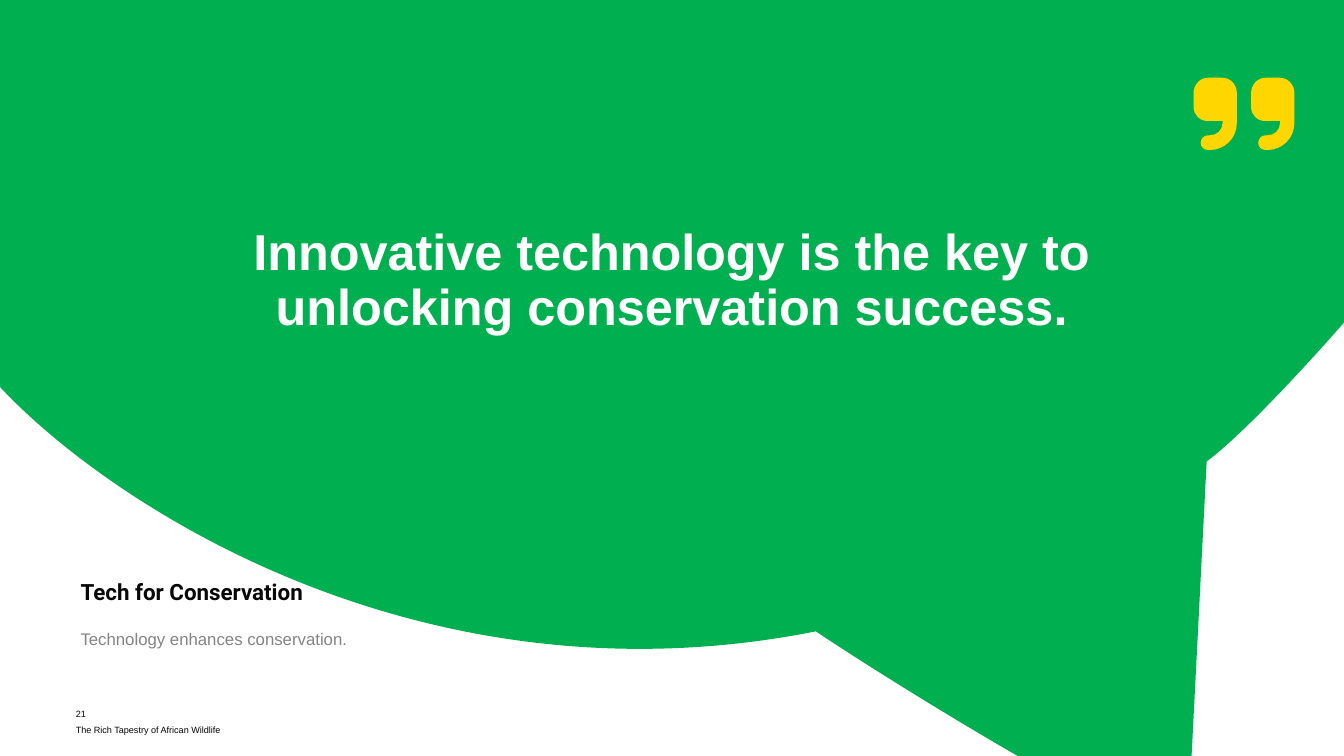
import lxml.etree
import pptx
import pptx.util
import pptx.dml.color
import pptx.enum.text
import pptx.oxml.ns

Cm = pptx.util.Cm
Pt = pptx.util.Pt
Align = pptx.enum.text.PP_ALIGN
Anchor = pptx.enum.text.MSO_ANCHOR
tag = pptx.oxml.ns.qn

COLORS = {
    "bubble": "00B050",
    "mark": "FFD600",
    "quote": "FFFFFF",
    "ink": "080808",
    "note": "848484",
}

BUBBLE = [
    (0, 9.75), (0, 0), (33.87, 0), (33.87, 8.13),
    (33.87, 8.13, 31.6, 10.74, 30.41, 11.63),
    (30.03, 19.05), (25.65, 19.05),
    (24.66, 18.49, 22.3, 17.07, 20.56, 15.91),
    (10.52, 17.91, 2.67, 12.62, 0, 9.75),
]
MARK = [
    (1.09, 1.14),
    (1.09, 1.52, 0.79, 1.82, 0.41, 1.82),
    (0.36, 1.82),
    (0.26, 1.82, 0.18, 1.74, 0.18, 1.64),
    (0.18, 1.54, 0.26, 1.45, 0.36, 1.45),
    (0.41, 1.45),
    (0.59, 1.45, 0.73, 1.32, 0.73, 1.14),
    (0.73, 1.09), (0.36, 1.09),
    (0.16, 1.09, 0, 0.94, 0, 0.74),
    (0, 0.38),
    (0, 0.18, 0.16, 0, 0.36, 0),
    (0.73, 0),
    (0.93, 0, 1.09, 0.18, 1.09, 0.38),
]
STEP = 1.45


def color(name):
    return pptx.dml.color.RGBColor.from_string(COLORS[name])


def spots(part, shift):
    return [(Cm(x + shift), Cm(y)) for x, y in zip(part[::2], part[1::2])]


def curve(shape, outline, count):
    lines = shape.element.iter(tag("a:lnTo"))
    nodes = iter(list(lines))
    for part in outline[1:] * count:
        group = [next(nodes) for _ in range(len(part) // 2)]
        if len(group) == 3:
            bend = lxml.etree.Element(tag("a:cubicBezTo"))
            group[0].addprevious(bend)
            for node in group:
                bend.append(node[0])
                node.getparent().remove(node)


def draw(slide, left, top, outline, fill, shifts=(0,)):
    pen = slide.shapes.build_freeform(*spots(outline[0], shifts[0])[0])
    for i, shift in enumerate(shifts):
        if i:
            pen.move_to(*spots(outline[0], shift)[0])
        points = [spot for part in outline[1:] for spot in spots(part, shift)]
        pen.add_line_segments(points, close=True)
    shape = pen.convert_to_shape(Cm(left), Cm(top))
    curve(shape, outline, len(shifts))
    shape.shadow.inherit = False
    shape.fill.solid()
    shape.fill.fore_color.rgb = color(fill)
    shape.line.fill.background()


def write(slide, box, text, size, ink, font="Arial", bold=False,
          align=Align.LEFT, anchor=Anchor.TOP, lines=1.0, before=0):
    frame = slide.shapes.add_textbox(*map(Cm, box)).text_frame
    frame.word_wrap = True
    frame.margin_left = frame.margin_right = 0
    frame.margin_top = frame.margin_bottom = 0
    frame.vertical_anchor = anchor
    para = frame.paragraphs[0]
    para.text = text
    para.alignment = align
    para.line_spacing = lines
    para.space_before = Pt(before)
    para.font.name = font
    para.font.size = Pt(size)
    para.font.bold = bold
    para.font.color.rgb = color(ink)


def quote(slide, left, top, width, height):
    draw(slide, left, top, BUBBLE, "bubble")
    draw(slide, left + width - 3.79, top + 1.96, MARK, "mark", (STEP, 0))
    write(slide, (left + 5.2, top + 4.14, 23.47, 5.92),
          "Innovative technology is the key to unlocking conservation success.",
          36, "quote", bold=True, align=Align.CENTER, anchor=Anchor.MIDDLE,
          lines=0.9, before=10)


def source(slide, left, top, width, height):
    write(slide, (left, top, width, 0.76), "Tech for Conservation", 16, "ink",
          font="Roboto", bold=True, lines=0.9)
    write(slide, (left, top + height - 1.02, width, 1.02),
          "Technology enhances conservation.", 12, "note", lines=1.2)


def footer(slide, left, top, width, height):
    row = 0.28
    write(slide, (left, top, 7.62, row), "21", 6.5, "ink",
          anchor=Anchor.MIDDLE, before=8.1)
    write(slide, (left, top + height - row, width, row),
          "The Rich Tapestry of African Wildlife", 6.5, "ink",
          anchor=Anchor.MIDDLE, before=8.1)


def main():
    deck = pptx.Presentation()
    deck.slide_width, deck.slide_height = Cm(33.87), Cm(19.05)
    slide = deck.slides.add_slide(deck.slide_layouts[6])
    quote(slide, 0, 0, 33.87, 19.05)
    source(slide, 2.03, 14.65, 9.09, 2.11)
    footer(slide, 1.91, 17.86, 17.53, 0.66)
    deck.save("out.pptx")


if __name__ == "__main__":
    main()
